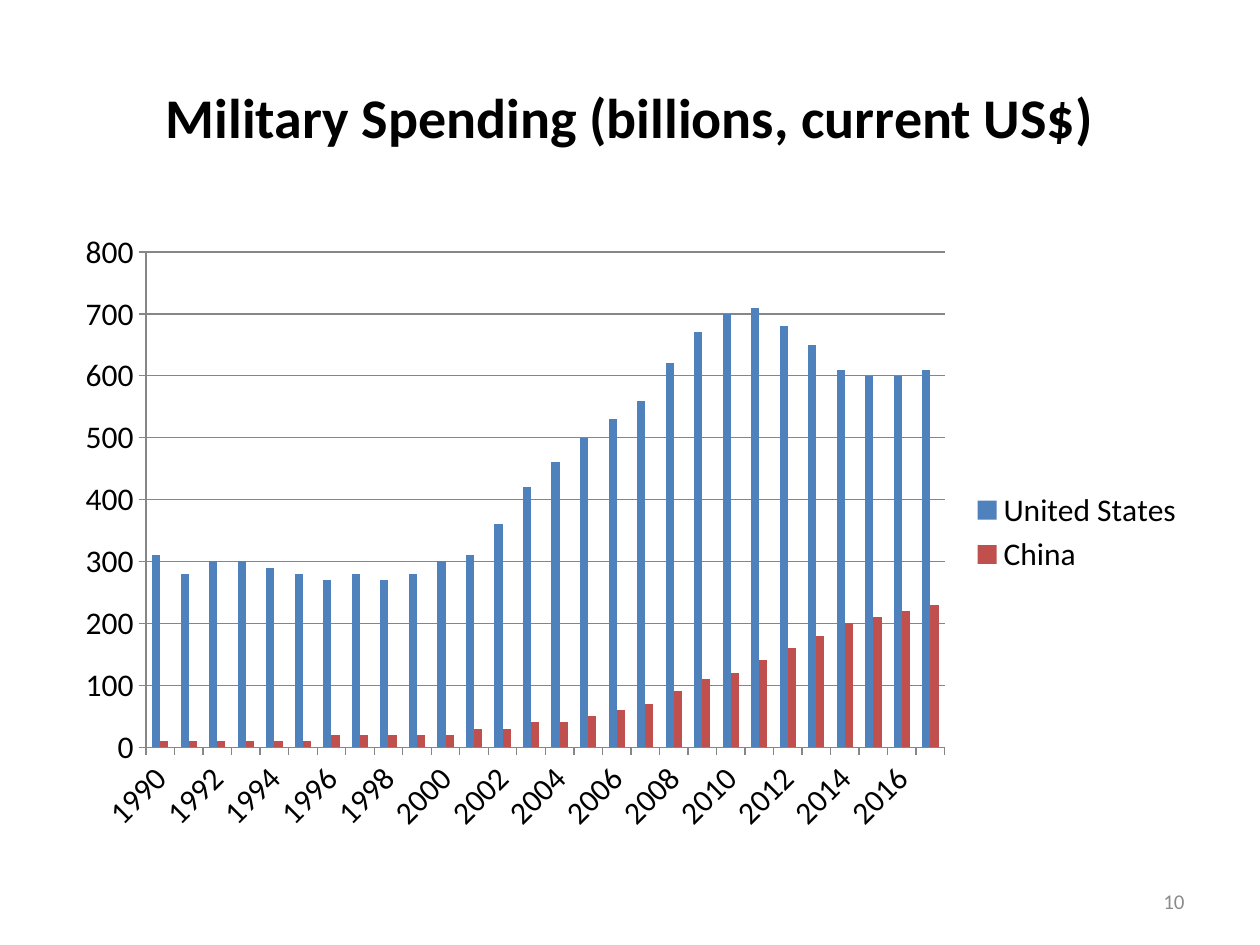
"""Build a slide with a column chart of military spending by country and year."""
from pptx import Presentation
from pptx.chart.data import CategoryChartData
from pptx.dml.color import RGBColor
from pptx.enum.chart import XL_CHART_TYPE as Chart, XL_LEGEND_POSITION as Legend, XL_TICK_MARK as Tick
from pptx.enum.text import MSO_ANCHOR as Anchor, PP_ALIGN as Align
from pptx.util import Inches, Pt

FONT = "Calibri"
BLACK, GRAY, AXIS_GRAY = "000000", "8C8C8C", "868686"
YEARS = [str(year) for year in range(1990, 2018)]
SERIES = [
    ("United States", "4F81BD",
     (310, 280, 300, 300, 290, 280, 270, 280, 270, 280, 300, 310, 360, 420,
      460, 500, 530, 560, 620, 670, 700, 710, 680, 650, 610, 600, 600, 610)),
    ("China", "C0504D",
     (10, 10, 10, 10, 10, 10, 20, 20, 20, 20, 20, 30, 30, 40,
      40, 50, 60, 70, 90, 110, 120, 140, 160, 180, 200, 210, 220, 230)),
]
TEXTS = [
    ("Military Spending (billions, current US$)", (0.5, 0.3, 9, 1.25), 32, BLACK, True, Align.CENTER),
    ("10", (7.17, 6.95, 2.33, 0.4), 12, GRAY, False, Align.RIGHT),
]
CHART_BOX = (0.5, 1.75, 9, 4.95)


def rgb(color):
    return RGBColor.from_string(color)


def set_font(font, size, color, bold=False):
    font.name, font.size, font.bold = FONT, Pt(size), bold
    font.color.rgb = rgb(color)


def add_text(s, text, box, size, color, bold, align):
    tf = s.shapes.add_textbox(*map(Inches, box)).text_frame
    tf.word_wrap = True
    tf.vertical_anchor = Anchor.MIDDLE
    tf.text = text
    p = tf.paragraphs[0]
    p.alignment = align
    set_font(p.runs[0].font, size, color, bold)


def style_axis(axis):
    axis.major_tick_mark, axis.minor_tick_mark = Tick.OUTSIDE, Tick.NONE
    axis.format.line.color.rgb = rgb(AXIS_GRAY)
    axis.format.line.width = Pt(0.75)
    set_font(axis.tick_labels.font, 18, BLACK)


def add_spending_chart(s):
    data = CategoryChartData()
    data.categories = YEARS
    for name, _, values in SERIES:
        data.add_series(name, values)
    chart = s.shapes.add_chart(Chart.COLUMN_CLUSTERED, *map(Inches, CHART_BOX), data).chart
    set_font(chart.font, 18, BLACK)
    chart.has_title = False
    chart.has_legend = True
    chart.legend.position = Legend.RIGHT
    chart.legend.include_in_layout = False
    set_font(chart.legend.font, 18, BLACK)

    plot = chart.plots[0]
    plot.gap_width, plot.overlap = 150, 0
    plot.vary_by_categories = False
    for series, (_, color, _) in zip(plot.series, SERIES):
        series.format.fill.solid()
        series.format.fill.fore_color.rgb = rgb(color)

    years, dollars = chart.category_axis, chart.value_axis
    for axis in (years, dollars):
        style_axis(axis)
    years.has_major_gridlines = False
    years.tick_labels.font._element.getparent().getparent().getparent().bodyPr.set("rot", "-2700000")
    dollars.minimum_scale, dollars.maximum_scale, dollars.major_unit = 0, 800, 100
    dollars.has_major_gridlines = True
    grid = dollars.major_gridlines.format.line
    grid.color.rgb, grid.width = rgb(AXIS_GRAY), Pt(0.75)


def main():
    prs = Presentation()
    prs.slide_width, prs.slide_height = Inches(10), Inches(7.5)
    s = prs.slides.add_slide(prs.slide_layouts[6])
    for text in TEXTS:
        add_text(s, *text)
    add_spending_chart(s)
    prs.save("out.pptx")


if __name__ == "__main__":
    main()
